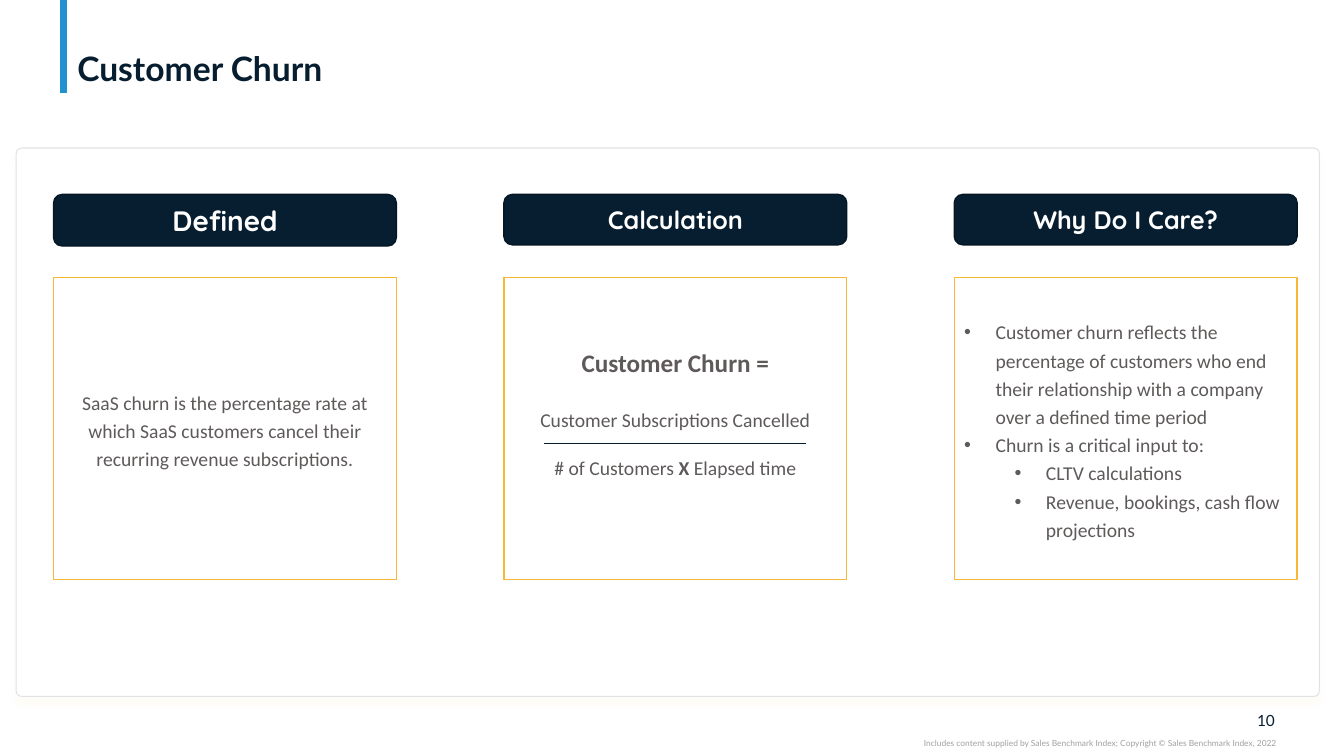
from pptx import Presentation
from pptx.dml.color import RGBColor
from pptx.enum.shapes import MSO_CONNECTOR, MSO_SHAPE
from pptx.enum.text import MSO_ANCHOR, PP_ALIGN
from pptx.oxml.ns import qn
from pptx.util import Cm, Pt
from lxml.etree import SubElement

NAVY = RGBColor(0x07, 0x1E, 0x31)
EDGE = RGBColor(0x05, 0x16, 0x24)
BLUE = RGBColor(0x23, 0x91, 0xCF)
GOLD = RGBColor(0xF8, 0xB7, 0x37)
GREY = RGBColor(0x5F, 0x5A, 0x5A)
PALE = RGBColor(0xA0, 0xA0, 0xA0)
RIM = RGBColor(0xE0, 0xE3, 0xE6)
WHITE = RGBColor(0xFF, 0xFF, 0xFF)
LEFT, MID, RIGHT = PP_ALIGN.LEFT, PP_ALIGN.CENTER, PP_ALIGN.RIGHT

LABELS = [
    ((1.7, 0.1, 30.45, 2.13), "Customer Churn", 24, NAVY, True, LEFT, MSO_ANCHOR.BOTTOM, 0.25),
    ((31.29, 17.91, 0.84, 0.48), "10", 11, NAVY, False, RIGHT, MSO_ANCHOR.MIDDLE, 0),
    ((19.05, 18.59, 13.11, 0.25),
     "Includes content supplied by Sales Benchmark Index; Copyright © Sales Benchmark Index, 2022",
     6, PALE, False, RIGHT, MSO_ANCHOR.TOP, 0),
]

# Each line: runs as (text, bold), size, space before, line spacing, bullet indent
COLUMNS = [
    ("Defined", 20, 1.3, MID, 0.13, [
        ([("SaaS churn is the percentage rate at which SaaS customers cancel "
           "their recurring revenue subscriptions.", False)], 14, 0, 1.2, None),
    ]),
    ("Calculation", 18, 1.27, MID, 0.9, [
        ([("Customer Churn =", True)], 18, 0, 1, None),
        ([("Customer Subscriptions Cancelled", False)], 14, 22, 1, None),
        ([("# of Customers ", False), ("X", True), (" Elapsed time", False)], 14, 17, 1, None),
    ]),
    ("Why Do I Care?", 18, 1.27, LEFT, 0.13, [
        ([("Customer churn reflects the percentage of customers who end their "
           "relationship with a company over a defined time period", False)], 14, 0, 1.2, 0.79),
        ([("Churn is a critical input to:", False)], 14, 0, 1.2, 0.79),
        ([("CLTV calculations", False)], 14, 0, 1.2, 2.06),
        ([("Revenue, bookings, cash flow projections", False)], 14, 0, 1.2, 2.06),
    ]),
]
START, STEP, WIDTH = 1.35, 11.35, 8.64
HEAD, BODY, TALL = 4.9, 6.99, 7.62


def style(para, face, size, color, bold=None):
    font = para.font
    font.name, font.size, font.bold = face, Pt(size), bold
    font.color.rgb = color


def block(slide, kind, place, fill, edge, width):
    shape = slide.shapes.add_shape(kind, *map(Cm, place))
    shape.shadow.inherit = False
    shape.fill.solid()
    shape.fill.fore_color.rgb = fill
    shape.line.color.rgb = edge
    shape.line.width = Pt(width)
    return shape


def rule(slide, ends, color, width):
    line = slide.shapes.add_connector(MSO_CONNECTOR.STRAIGHT, *map(Cm, ends))
    line.line.color.rgb = color
    line.line.width = Pt(width)
    SubElement(line._element.spPr, qn("a:effectLst"))


def label(slide, place, text, size, color, bold, align, anchor, inset):
    frame = slide.shapes.add_textbox(*map(Cm, place)).text_frame
    frame.word_wrap = True
    frame.vertical_anchor = anchor
    frame.margin_left = frame.margin_right = Cm(inset)
    frame.margin_top = frame.margin_bottom = 0
    para = frame.paragraphs[0]
    para.text, para.alignment = text, align
    style(para, "Lato", size, color, bold)


def bullet(para, indent):
    props = para._p.get_or_add_pPr()
    props.set("marL", str(Cm(indent)))
    props.set("indent", str(-Cm(0.79)))
    SubElement(props, qn("a:buFont"), typeface="Arial")
    SubElement(props, qn("a:buChar"), char="•")


def glow(shape):
    effects = shape._element.spPr.find(qn("a:effectLst"))
    outer = SubElement(effects, qn("a:outerShdw"), blurRad=str(Pt(4)),
                       dist=str(Pt(6)), dir="5400000", algn="t", rotWithShape="0")
    tint = SubElement(outer, qn("a:srgbClr"), val=str(GOLD))
    SubElement(tint, qn("a:alpha"), val="4000")


def column(slide, left, title, size, height, align, foot, lines):
    head = block(slide, MSO_SHAPE.ROUNDED_RECTANGLE, (left, HEAD, WIDTH, height), NAVY, EDGE, 1)
    head.text_frame.vertical_anchor = MSO_ANCHOR.MIDDLE
    para = head.text_frame.paragraphs[0]
    para.text, para.alignment = title, MID
    style(para, "Quicksand", size, WHITE, True)

    box = block(slide, MSO_SHAPE.RECTANGLE, (left, BODY, WIDTH, TALL), WHITE, GOLD, 1)
    frame = box.text_frame
    frame.word_wrap = True
    frame.vertical_anchor = MSO_ANCHOR.MIDDLE
    frame.margin_bottom = Cm(foot)
    for row, (runs, points, before, spacing, indent) in enumerate(lines):
        para = frame.add_paragraph() if row else frame.paragraphs[0]
        para.alignment, para.line_spacing = align, spacing
        if before:
            para.space_before = Pt(before)
        if indent:
            para.level = int(indent > 1)
            bullet(para, indent)
        style(para, "Calibri", points, GREY)
        for text, bold in runs:
            run = para.add_run()
            run.text, run.font.bold = text, bold


def main():
    deck = Presentation()
    deck.slide_width, deck.slide_height = Cm(33.87), Cm(19.05)
    slide = deck.slides.add_slide(deck.slide_layouts[6])
    rule(slide, (1.6, 0, 1.6, 2.34), BLUE, 5)
    for item in LABELS:
        label(slide, *item)
    card = block(slide, MSO_SHAPE.ROUNDED_RECTANGLE, (0.41, 3.73, 32.84, 13.82), WHITE, RIM, 0.75)
    card.adjustments[0] = 0.01
    glow(card)
    for index, item in enumerate(COLUMNS):
        column(slide, START + index * STEP, *item)
    rule(slide, (13.72, 11.18, 20.32, 11.18), NAVY, 0.25)
    deck.save("out.pptx")


if __name__ == "__main__":
    main()
